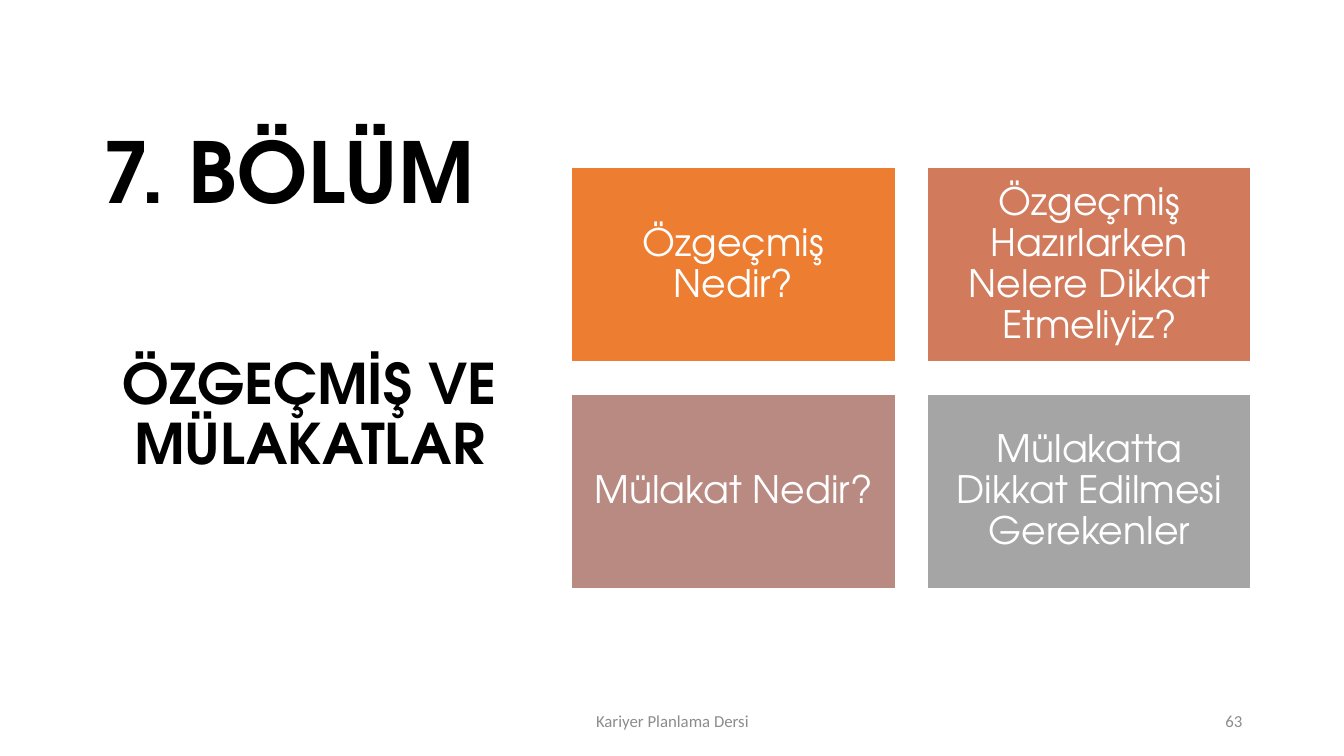
from pptx import Presentation
from pptx.dml.color import RGBColor
from pptx.enum.shapes import MSO_SHAPE
from pptx.enum.text import MSO_ANCHOR, MSO_AUTO_SIZE, PP_ALIGN
from pptx.util import Inches, Pt

HEADING_FONT = "TeX Gyre Adventor"
TOPICS = [
    ("Özgeçmiş Nedir?", "ED7D31"),
    ("Özgeçmiş Hazırlarken Nelere Dikkat Etmeliyiz?", "D17B5C"),
    ("Mülakat Nedir?", "B98A82"),
    ("Mülakatta Dikkat Edilmesi Gerekenler", "A5A5A5"),
]


def color(value):
    """Turn a hex string into a colour."""
    return RGBColor.from_string(value)


def write(shape, text, size, ink, align, anchor=MSO_ANCHOR.MIDDLE,
          font=HEADING_FONT, bold=False, spacing=0.9):
    """Fill a shape with one formatted paragraph."""
    frame = shape.text_frame
    frame.word_wrap = True
    frame.auto_size = MSO_AUTO_SIZE.NONE
    frame.vertical_anchor = anchor
    frame.text = text
    paragraph = frame.paragraphs[0]
    paragraph.alignment = align
    paragraph.line_spacing = spacing
    paragraph.space_before = Pt(0)
    paragraph.font.name = font
    paragraph.font.size = Pt(size)
    paragraph.font.bold = bold
    paragraph.font.color.rgb = color(ink)


def place(shape, left, top, width, height):
    """Move and resize a shape, in inches."""
    shape.left, shape.top = Inches(left), Inches(top)
    shape.width, shape.height = Inches(width), Inches(height)


def add_heading(page, left, top, width):
    """Set the chapter number and the chapter name below it."""
    title, subject = page.shapes.title, page.placeholders[1]
    place(title, left, top, width, 1.75)
    write(title, "7. BÖLÜM", 60, "000000", PP_ALIGN.LEFT, MSO_ANCHOR.BOTTOM, bold=True)
    place(subject, left, top + 2.18, width, 2.9)
    write(subject, "ÖZGEÇMİŞ VE MÜLAKATLAR", 40, "000000", PP_ALIGN.CENTER, bold=True)


def add_topics(page, left, top, width, height, gap=0.32):
    """Lay out the topic tiles in a two-column grid."""
    tile_width, tile_height = (width - gap) / 2, (height - gap) / 2
    for index, (text, fill) in enumerate(TOPICS):
        row, column = divmod(index, 2)
        tile = page.shapes.add_shape(
            MSO_SHAPE.RECTANGLE,
            Inches(left + column * (tile_width + gap)),
            Inches(top + row * (tile_height + gap)),
            Inches(tile_width), Inches(tile_height))
        tile.shadow.inherit = False
        tile.fill.solid()
        tile.fill.fore_color.rgb = color(fill)
        tile.line.color.rgb = color("FFFFFF")
        tile.line.width = Pt(1)
        frame = tile.text_frame
        frame.margin_left = frame.margin_right = Inches(0.11)
        frame.margin_top = frame.margin_bottom = Inches(0.11)
        write(tile, text, 27, "FFFFFF", PP_ALIGN.CENTER)
        frame.paragraphs[0].space_after = Pt(9.45)


def add_footer(page, left, top, width, height):
    """Add the course name and the page number."""
    entries = [("Kariyer Planlama Dersi", 0, 4.5, PP_ALIGN.CENTER),
               ("63", width - 3, 3, PP_ALIGN.RIGHT)]
    for text, offset, box_width, align in entries:
        box = page.shapes.add_textbox(Inches(left + offset), Inches(top),
                                      Inches(box_width), Inches(height))
        write(box, text, 12, "8C8C8C", align, font="Calibri", spacing=1)


def main():
    """Build and save the chapter slide."""
    deck = Presentation()
    deck.slide_width, deck.slide_height = Inches(13.33), Inches(7.5)
    page = deck.slides.add_slide(deck.slide_layouts[2])
    add_heading(page, 0.92, 0.5, 4.3)
    add_topics(page, 5.67, 1.66, 6.74, 4.18)
    add_footer(page, 4.42, 6.95, 8, 0.4)
    deck.save("out.pptx")


if __name__ == "__main__":
    main()
